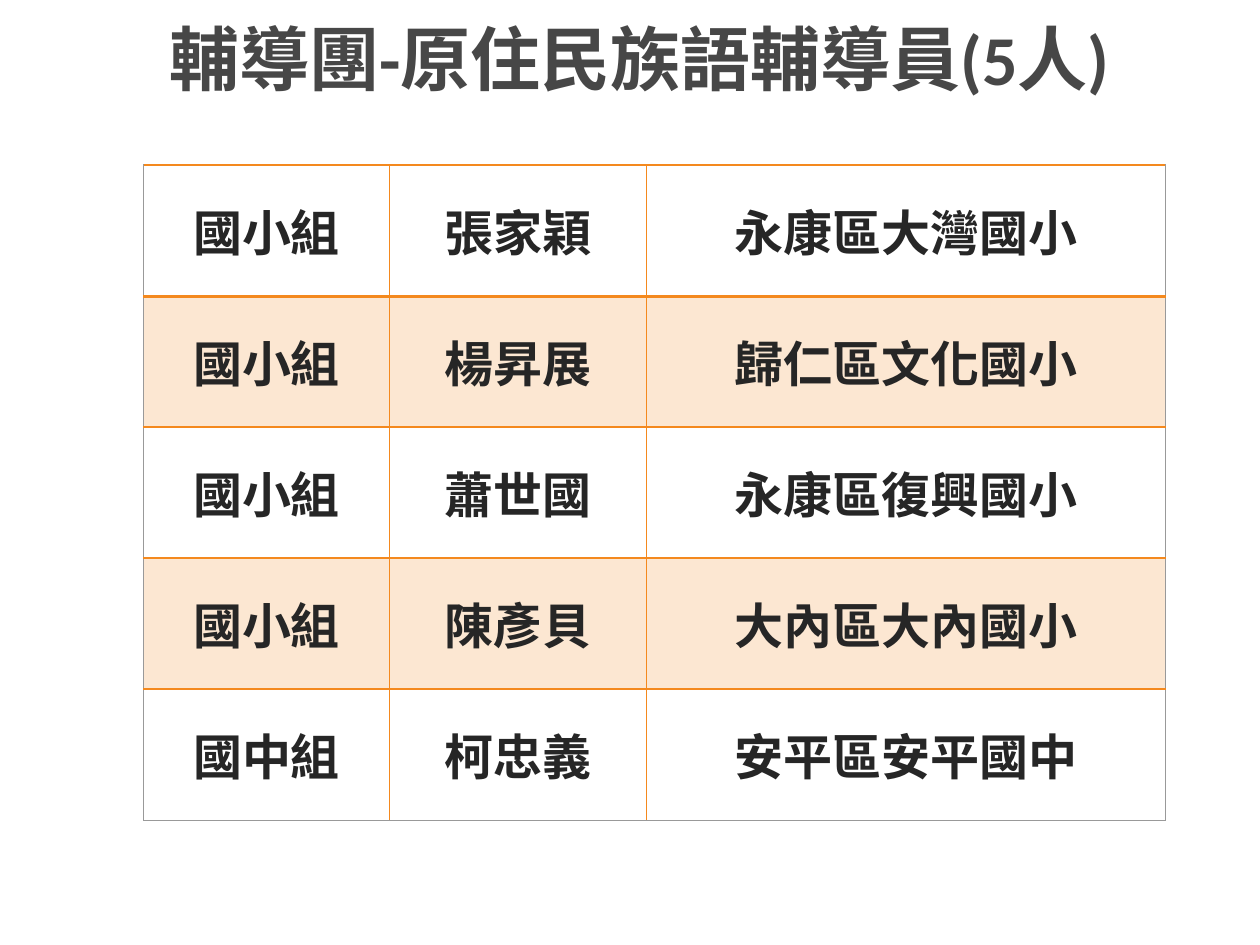
from lxml.etree import SubElement
from pptx import Presentation
from pptx.dml.color import RGBColor
from pptx.enum.text import MSO_ANCHOR, PP_ALIGN
from pptx.oxml.ns import qn
from pptx.util import Inches, Pt

HUES = {"title": "474747", "text": "262626", "line": "F4891E", "edge": "999999"}
CJK = "Noto Sans CJK SC"
COLS = (1.95, 2.04, 4.12)
ROWS = (
    ("國小組", "張家穎", "永康區大灣國小"),
    ("國小組", "楊昇展", "歸仁區文化國小"),
    ("國小組", "蕭世國", "永康區復興國小"),
    ("國小組", "陳彥貝", "大內區大內國小"),
    ("國中組", "柯忠義", "安平區安平國中"),
)


def write(frame, text, size, face, hue):
    """Put one bold, centred run in a text frame."""
    para = frame.paragraphs[0]
    para.alignment = PP_ALIGN.CENTER
    run = para.add_run()
    run.text = text
    font = run.font
    font.size, font.bold, font.name = Pt(size), True, face
    font.color.rgb = RGBColor.from_string(HUES[hue])
    props = font._element
    props.set("lang", "zh-TW")
    SubElement(props, qn("a:ea")).set("typeface", CJK)


def border(cell, side, hue, width):
    """Draw one side of a cell."""
    props = cell._tc.get_or_add_tcPr()
    line = SubElement(props, qn(f"a:ln{side}"), w=str(Pt(width)))
    fill = SubElement(line, qn("a:solidFill"))
    SubElement(fill, qn("a:srgbClr"), val=HUES[hue])


def shade(cell, band):
    """Tint a banded cell, or leave it clear."""
    if not band:
        cell.fill.background()
        return
    cell.fill.solid()
    cell.fill.fore_color.rgb = RGBColor.from_string(HUES["line"])
    tint = cell._tc.tcPr.find(f"{qn('a:solidFill')}/{qn('a:srgbClr')}")
    SubElement(tint, qn("a:alpha"), val="20000")


def heading(slide, left, top, width, height):
    """Place the title in its box."""
    title = slide.shapes.title
    title.left, title.top = Inches(left), Inches(top)
    title.width, title.height = Inches(width), Inches(height)
    frame = title.text_frame
    frame.vertical_anchor = MSO_ANCHOR.MIDDLE
    write(frame, "輔導團-原住民族語輔導員(5人)", 40, "Calibri", "title")


def roster(slide, left, top, width, height):
    """Place the table of members in its box."""
    last, end = len(ROWS) - 1, len(COLS) - 1
    table = slide.shapes.add_table(
        len(ROWS), len(COLS), Inches(left), Inches(top), Inches(width), Inches(height)
    ).table
    table.first_row = table.horz_banding = False
    for col, size in zip(table.columns, COLS):
        col.width = Inches(size)
    for r, row in enumerate(ROWS):
        for c, text in enumerate(row):
            cell = table.cell(r, c)
            cell.vertical_anchor = MSO_ANCHOR.MIDDLE
            cell.margin_left = cell.margin_right = Inches(0.02)
            cell.margin_top = cell.margin_bottom = 0
            write(cell.text_frame, text, 28, CJK, "text")
            sides = {
                "L": ("edge", 0.5) if c == 0 else ("line", 1),
                "R": ("edge", 0.5) if c == end else ("line", 1),
                "T": ("line", 2 if r == 1 else 1),
                "B": ("edge", 0.5) if r == last else ("line", 2 if r == 0 else 1),
            }
            for side, (hue, thick) in sides.items():
                border(cell, side, hue, thick)
            shade(cell, r % 2)


def main():
    """Build and save the slide."""
    deck = Presentation()
    deck.slide_width, deck.slide_height = Inches(10), Inches(7.5)
    slide = deck.slides.add_slide(deck.slide_layouts[5])
    heading(slide, 0.48, 0.08, 9.19, 0.75)
    roster(slide, 1.14, 1.31, 8.11, 5.2)
    deck.save("out.pptx")


if __name__ == "__main__":
    main()
